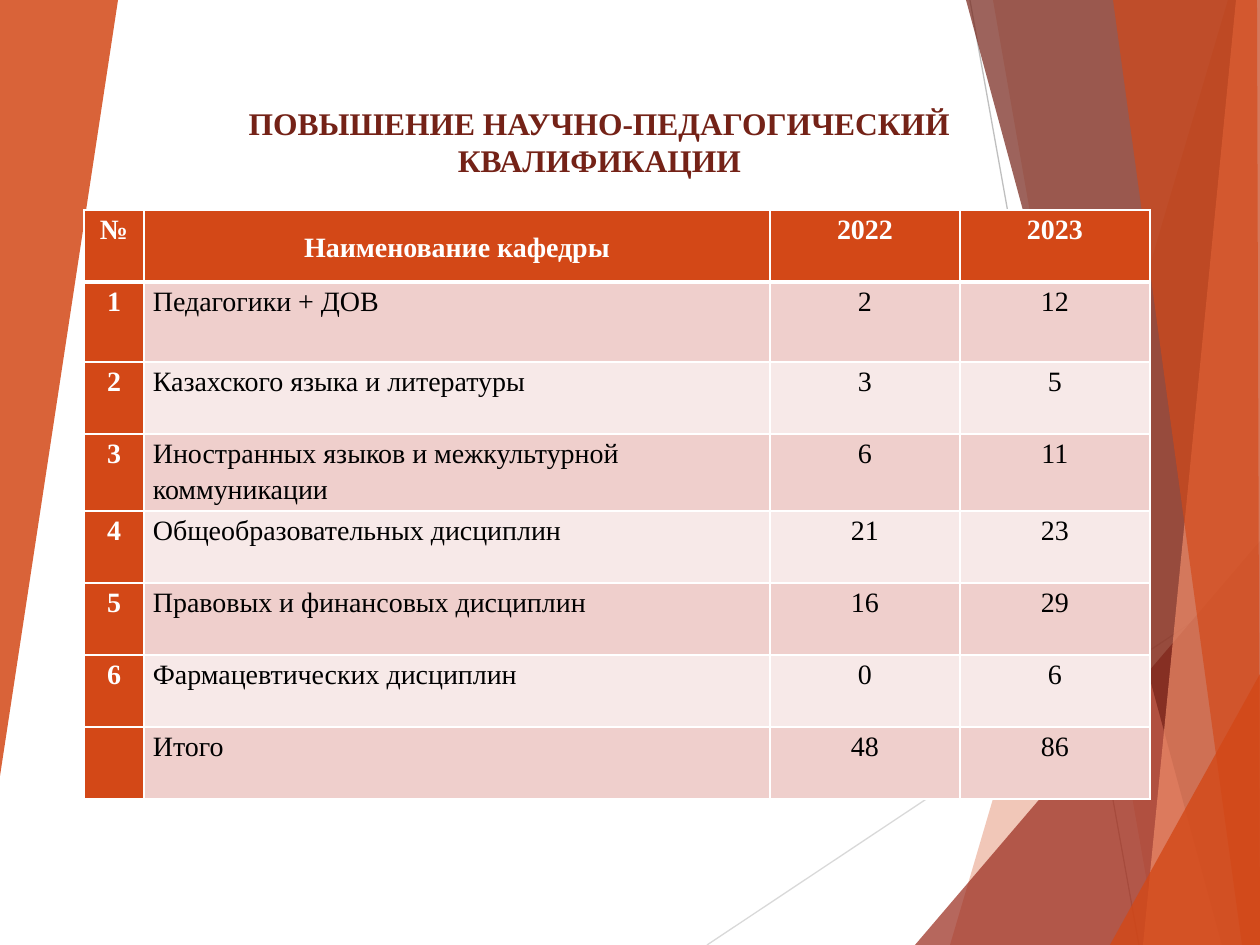
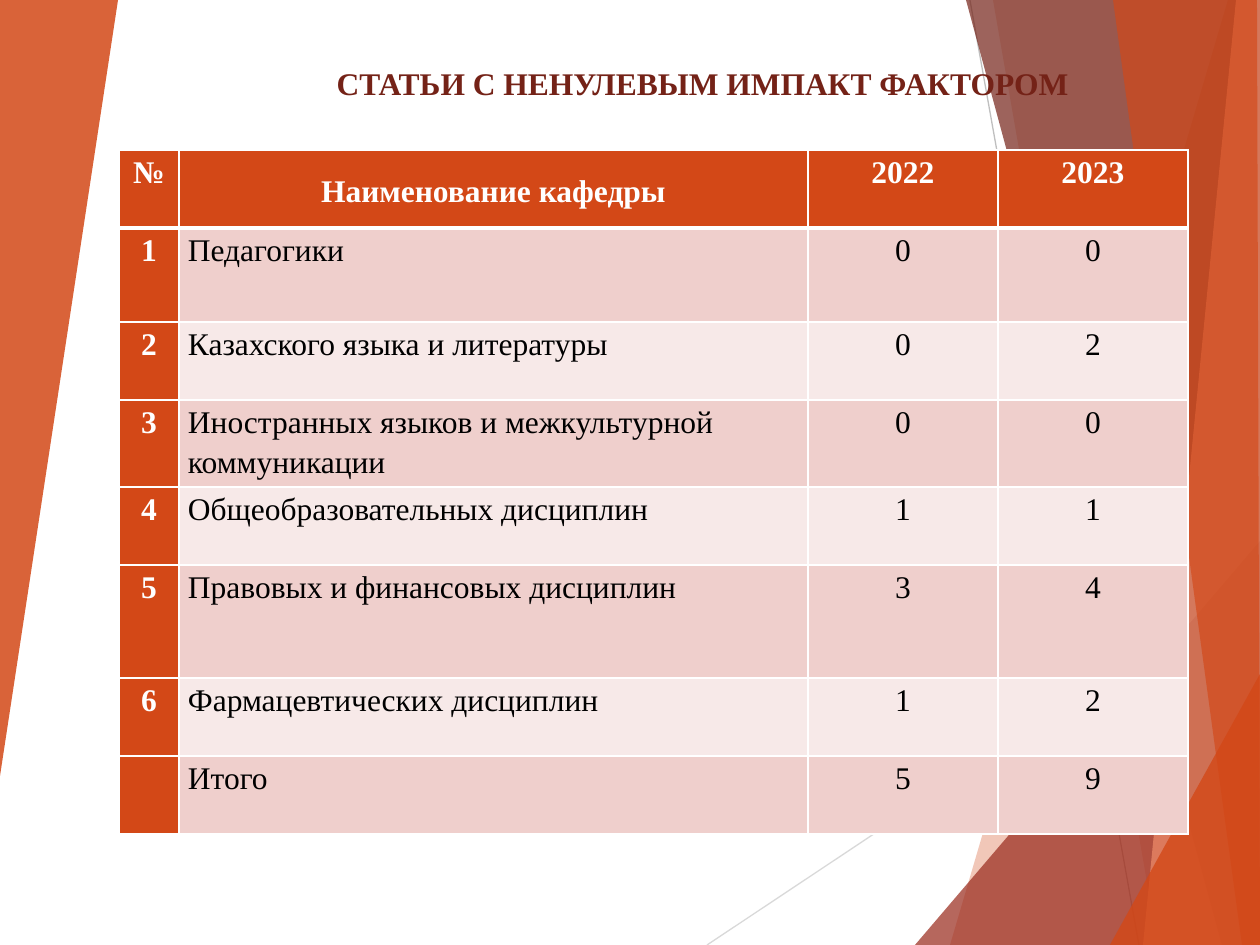
from dataclasses import dataclass
from pptx import Presentation
from pptx.dml.color import RGBColor
from pptx.enum.shapes import MSO_CONNECTOR
from pptx.enum.text import MSO_ANCHOR, MSO_AUTO_SIZE, PP_ALIGN
from pptx.oxml.ns import qn
from pptx.util import Emu, Pt
from lxml.etree import SubElement

UNIT = 914400 / 126
WIDE, HIGH = 1260, 945


@dataclass(frozen=True)
class Theme:
    face: str = "Times New Roman"
    rust: str = "D34817"
    brick: str = "9B2D1F"
    wine: str = "742217"
    peach: str = "EF8C6A"
    rose: str = "EFCFCC"
    blush: str = "F7E9E8"
    white: str = "FFFFFF"
    black: str = "000000"
    pale: str = "D9D9D9"
    gray: str = "BFBFBF"
    head: int = 18
    small: int = 16
    large: int = 18
    hair: float = 0.75
    thin: int = 1
    thick: int = 3


LOOK = Theme()

LINES = [
    ((707, HIGH), (WIDE, 577), LOOK.pale),
    ((970, 0), (1139, HIGH), LOOK.gray),
]
END = (WIDE, HIGH)
TOP = (WIDE, 0)
SHARDS = [
    ([(1228, 0), (950, HIGH), END, TOP], LOOK.rust, 30),
    ([(993, 0), (1158, HIGH), END, TOP], LOOK.rust, 20),
    ([(915, HIGH), (WIDE, 541), END], LOOK.brick, 72),
    ([(966, 0), (1222, HIGH), END, TOP], LOOK.wine, 70),
    ([(1236, 0), (1143, HIGH), END, TOP], LOOK.peach, 70),
    ([(1113, 0), (1242, HIGH), END, (1257, 0)], LOOK.rust, 65),
    ([(1110, HIGH), (WIDE, 674), END], LOOK.rust, 80),
    ([(0, 0), (118, 0), (0, 776)], LOOK.rust, 85),
]

HEADS = ("№", "Наименование кафедры", "2022", "2023")
CHAIRS = (
    "Казахского языка и литературы",
    "Иностранных языков и межкультурной коммуникации",
    "Общеобразовательных дисциплин",
    "Правовых и финансовых дисциплин",
    "Фармацевтических дисциплин",
)


def px(size):
    return Emu(round(size * UNIT))


def tint(code):
    return RGBColor.from_string(code)


def put(item, form):
    for name, value in form.items():
        setattr(item, name, value)


def place(item, box):
    put(item, dict(zip(("left", "top", "width", "height"), map(px, box))))


def style(part, size, code, bold):
    put(part.font, {"name": LOOK.face, "size": Pt(size), "bold": bold})
    part.font.color.rgb = tint(code)


def add_line(slide, start, end, code):
    line = slide.shapes.add_connector(
        MSO_CONNECTOR.STRAIGHT, *map(px, start + end))
    line.line.color.rgb = tint(code)
    line.line.width = Pt(LOOK.hair)
    SubElement(line.element.spPr, qn("a:effectLst"))
    return line


def add_shard(slide, points, code, alpha):
    pen = slide.shapes.build_freeform(*points[0], scale=UNIT)
    pen.add_line_segments(points[1:], close=True)
    shard = pen.convert_to_shape()
    shard.shadow.inherit = False
    shard.line.fill.background()
    shard.fill.solid()
    shard.fill.fore_color.rgb = tint(code)
    color = shard.element.spPr.find(qn("a:solidFill"))[0]
    SubElement(color, qn("a:alpha"), val=str(alpha * 1000))
    return shard


def dress(slide):
    base = slide.slide_layout
    for holder in list(base.placeholders)[1:]:
        holder.element.getparent().remove(holder.element)
    parts = [add_line(slide, *line) for line in LINES]
    parts += [add_shard(slide, *shard) for shard in SHARDS]
    for part in parts:
        base.shapes.element.append(part.element)


def add_title(slide, text, box, form, align):
    title = slide.shapes.title
    place(title, box)
    title.text = text
    put(title.text_frame, {"auto_size": MSO_AUTO_SIZE.SHAPE_TO_FIT_TEXT, **form})
    line = title.text_frame.paragraphs[0]
    line.alignment = align
    style(line.runs[0], LOOK.head, LOOK.wine, True)


def edge(cell, widths):
    props = cell._tc.get_or_add_tcPr()
    for spot, (side, width) in enumerate(zip("LRTB", widths)):
        line = props.makeelement(qn(f"a:ln{side}"), {"w": str(Pt(width))})
        fill = SubElement(line, qn("a:solidFill"))
        SubElement(fill, qn("a:srgbClr"), val=LOOK.white)
        props.insert(spot, line)


def fill_cell(cell, text, row, col, size):
    head = row == 0 or col == 0
    band = LOOK.rose if row % 2 else LOOK.blush
    cell.fill.solid()
    cell.fill.fore_color.rgb = tint(LOOK.rust if head else band)
    put(cell, {"margin_left": px(9), "margin_right": px(9),
               "margin_top": 0, "margin_bottom": 0,
               "vertical_anchor": MSO_ANCHOR.MIDDLE if row == 0 and col == 1
               else MSO_ANCHOR.TOP})
    edge(cell, (LOOK.thin, LOOK.thin,
                LOOK.thick if row == 1 else LOOK.thin,
                LOOK.thick if row == 0 else LOOK.thin))
    line = cell.text_frame.paragraphs[0]
    put(line, {"line_spacing": 1.15,
               "alignment": PP_ALIGN.LEFT if row and col == 1
               else PP_ALIGN.CENTER})
    if text:
        line.text = text
        style(line.runs[0], size, LOOK.white if head else LOOK.black, head)


def add_grid(slide, spot, cols, highs, first, counts, size):
    names = (first, *CHAIRS, "Итого")
    marks = [str(n) for n in range(1, len(names))] + [""]
    rows = [HEADS] + [(mark, name, *map(str, pair))
                      for mark, name, pair in zip(marks, names, counts)]
    box = (*spot, sum(cols), sum(highs))
    grid = slide.shapes.add_table(
        len(rows), len(cols), *map(px, box)).table
    grid.first_col = True
    for col, width in zip(grid.columns, cols):
        col.width = px(width)
    for row, high in zip(grid.rows, highs):
        row.height = px(high)
    for r, texts in enumerate(rows):
        for c, text in enumerate(texts):
            fill_cell(grid.cell(r, c), text, r, c, size)


def main():
    deck = Presentation()
    put(deck, {"slide_width": px(WIDE), "slide_height": px(HIGH)})
    base = deck.slide_layouts[5]

    growth = deck.slides.add_slide(base)
    dress(growth)
    add_title(growth, "ПОВЫШЕНИЕ НАУЧНО-ПЕДАГОГИЧЕСКИЙ КВАЛИФИКАЦИИ",
              (180, 97, 839, 89),
              {"word_wrap": True, "vertical_anchor": MSO_ANCHOR.MIDDLE},
              PP_ALIGN.CENTER)
    add_grid(growth, (84, 210), (60, 626, 190, 190), [72, 80] + [72] * 6,
             "Педагогики + ДОВ",
             [(2, 12), (3, 5), (6, 11), (21, 23), (16, 29), (0, 6), (48, 86)],
             LOOK.small)

    papers = deck.slides.add_slide(base)
    add_title(papers, "СТАТЬИ С НЕНУЛЕВЫМ ИМПАКТ ФАКТОРОМ",
              (324, 58, 765, 50),
              {"word_wrap": False, "vertical_anchor": MSO_ANCHOR.TOP},
              PP_ALIGN.LEFT)
    add_grid(papers, (119, 150), (60, 629, 190, 190),
             [78, 94, 78, 78, 78, 113, 78, 78], "Педагогики",
             [(0, 0), (0, 2), (0, 0), (1, 1), (3, 4), (1, 2), (5, 9)],
             LOOK.large)

    deck.save("out.pptx")


if __name__ == "__main__":
    main()
